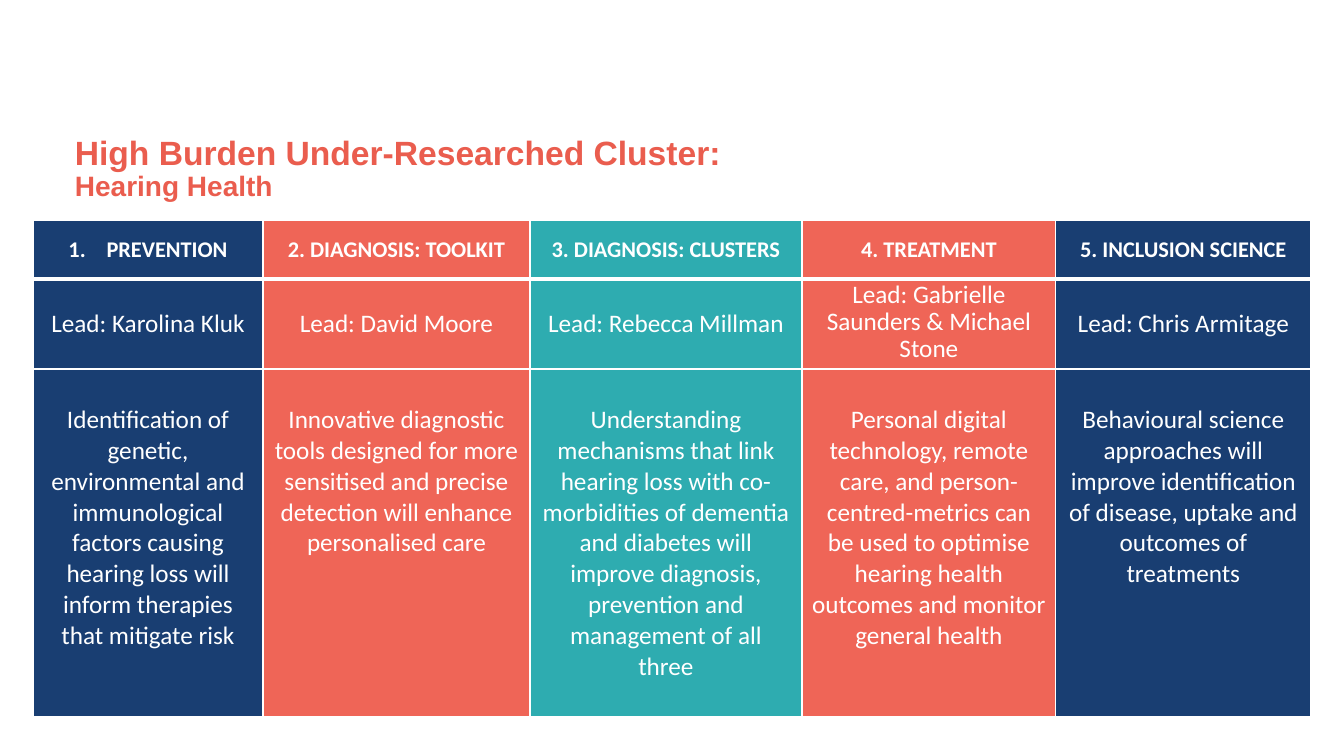
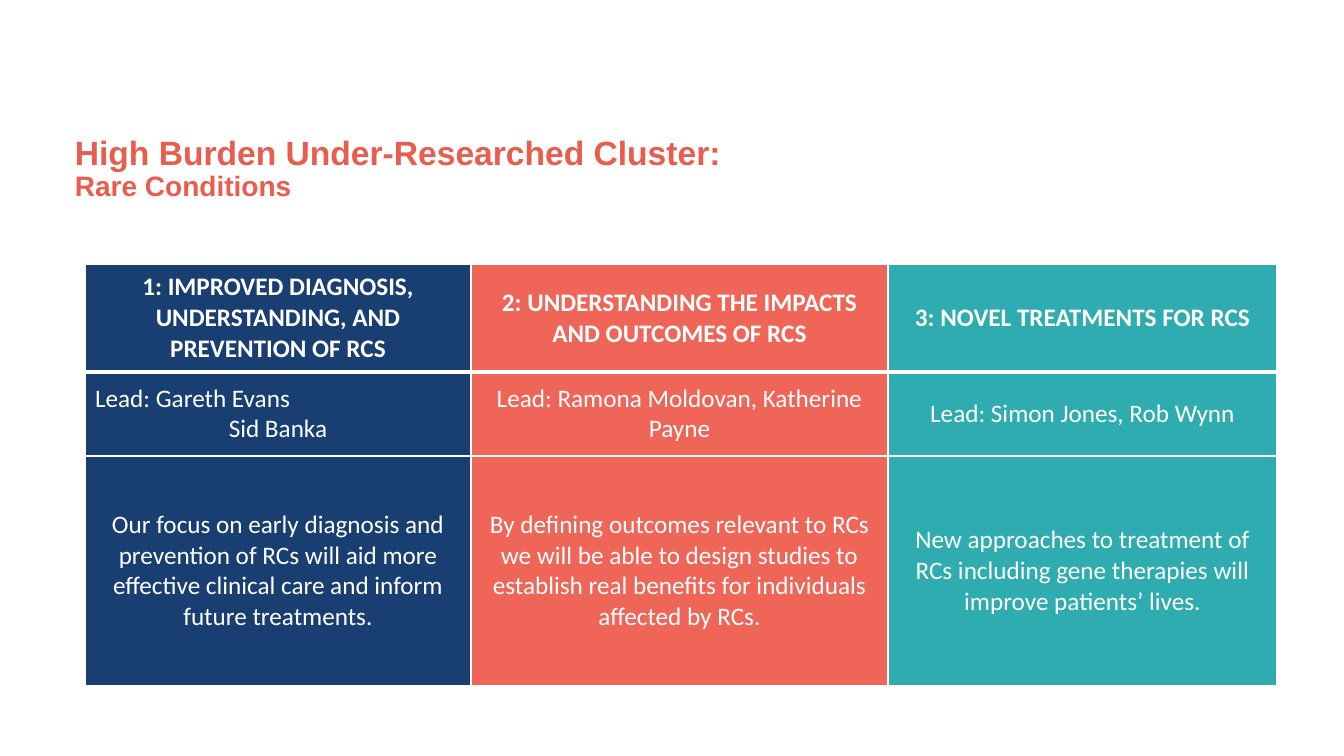
from dataclasses import dataclass

import pptx
import pptx.dml.color
import pptx.enum.text
import pptx.oxml
import pptx.oxml.ns
import pptx.util

PX = 914400 / 100.8
WIDTH, HEIGHT = 1344, 756
NAVY, CORAL, TEAL = "193E72", "EF6557", "2EACB0"
WHITE, RED = "FFFFFF", "EA5D4E"
SANS, BODY = "Arial", "Calibri"
TITLE = "High Burden Under-Researched Cluster:"
THIN, THICK = 1, 3

ALIGN = pptx.enum.text.PP_ALIGN
ANCHOR = pptx.enum.text.MSO_ANCHOR


@dataclass
class Line:
    text: str
    align: ALIGN = ALIGN.CENTER
    pitch: int | None = None  # line height in points
    indent: int = 0  # hanging indent in px; numbers the line when set


@dataclass
class Theme:
    fill: str
    head: Line
    leads: list[Line]
    goal: Line


@dataclass
class Page:
    name: str
    left: int
    top: int
    cols: list[int]
    rows: list[int]
    head_size: int
    themes: list[Theme]
    goal_top: int | None = None  # goals hang from the top by this much


PAGES = [
    Page("Hearing Health", 33, 220, [230, 267, 272, 254, 255], [59, 90, 348], 16, [
        Theme(NAVY, Line("PREVENTION", indent=38), [Line("Lead: Karolina Kluk")],
              Line("Identification of genetic, environmental and immunological factors "
                   "causing hearing loss will inform therapies that mitigate risk")),
        Theme(CORAL, Line("2. DIAGNOSIS: TOOLKIT"), [Line("Lead: David Moore")],
              Line("Innovative diagnostic tools designed for more sensitised and precise "
                   "detection will enhance personalised care")),
        Theme(TEAL, Line("3. DIAGNOSIS: CLUSTERS"), [Line("Lead: Rebecca Millman")],
              Line("Understanding mechanisms that link hearing loss with co-morbidities of "
                   "dementia and diabetes will improve diagnosis, prevention and management "
                   "of all three")),
        Theme(CORAL, Line("4. TREATMENT"),
              [Line("Lead: Gabrielle Saunders & Michael Stone", pitch=19)],
              Line("Personal digital technology, remote care, and person-centred-metrics can "
                   "be used to optimise hearing health outcomes and monitor general health")),
        Theme(NAVY, Line("5. INCLUSION SCIENCE"), [Line("Lead: Chris Armitage")],
              Line("Behavioural science approaches will improve identification of disease, "
                   "uptake and outcomes of treatments")),
    ], goal_top=36),
    Page("Rare Conditions", 85, 264, [386, 417, 389], [108, 84, 230], 18, [
        Theme(NAVY, Line("1: IMPROVED DIAGNOSIS, UNDERSTANDING, AND PREVENTION OF RCS"),
              [Line("Lead: Gareth Evans", ALIGN.LEFT), Line("Sid Banka")],
              Line("Our focus on early diagnosis and prevention of RCs will aid more "
                   "effective clinical care and inform future treatments.")),
        Theme(CORAL, Line("2: UNDERSTANDING THE IMPACTS AND OUTCOMES OF RCS"),
              [Line("Lead: Ramona Moldovan, Katherine Payne")],
              Line("By defining outcomes relevant to RCs we will be able to design studies to "
                   "establish real benefits for individuals affected by RCs.")),
        Theme(TEAL, Line("3: NOVEL TREATMENTS FOR RCS"), [Line("Lead: Simon Jones, Rob Wynn")],
              Line("New approaches to treatment of RCs including gene therapies will improve "
                   "patients’ lives.")),
    ]),
]


def emu(px: int) -> pptx.util.Emu:
    return pptx.util.Emu(round(px * PX))


def tint(code: str) -> pptx.dml.color.RGBColor:
    return pptx.dml.color.RGBColor.from_string(code)


def add_run(para, text: str, size: int, face: str, color: str, bold: bool) -> None:
    run = para.add_run()
    run.text = text
    run.font.size = pptx.util.Pt(size)
    run.font.name = face
    run.font.bold = bold
    run.font.color.rgb = tint(color)


def add_title(slide, name: str) -> None:
    frame = slide.shapes.add_textbox(emu(65), emu(119), emu(981), emu(101)).text_frame
    frame.word_wrap = True
    frame.vertical_anchor = ANCHOR.MIDDLE
    para = frame.paragraphs[0]
    para.line_spacing = 0.9
    add_run(para, TITLE, 24, SANS, RED, True)
    para.add_line_break()
    add_run(para, name, 20, SANS, RED, True)


def number(para, indent: int) -> None:
    """Number the paragraph with a hanging indent."""
    props = para._p.get_or_add_pPr()
    props.set("marL", str(emu(indent)))
    props.set("indent", str(-emu(indent)))
    mark = pptx.oxml.parse_xml(
        f'<a:buAutoNum {pptx.oxml.ns.nsdecls("a")} type="arabicPeriod"/>')
    props.append(mark)


def border(cell, top: int, base: int) -> None:
    props = cell._tc.get_or_add_tcPr()
    for side, width in (("L", THIN), ("R", THIN), ("T", top), ("B", base)):
        props.append(pptx.oxml.parse_xml(
            f'<a:ln{side} {pptx.oxml.ns.nsdecls("a")} w="{pptx.util.Pt(width)}">'
            f'<a:solidFill><a:srgbClr val="{WHITE}"/></a:solidFill></a:ln{side}>'))


def fill_cell(cell, lines: list[Line], size: int, bold: bool, color: str) -> None:
    cell.fill.solid()
    cell.fill.fore_color.rgb = tint(color)
    cell.vertical_anchor = ANCHOR.MIDDLE
    frame = cell.text_frame
    for rank, line in enumerate(lines):
        para = frame.add_paragraph() if rank else frame.paragraphs[0]
        para.alignment = line.align
        if line.pitch:
            para.line_spacing = pptx.util.Pt(line.pitch)
        if line.indent:
            number(para, line.indent)
        add_run(para, line.text, size, BODY, WHITE, bold)


def add_grid(slide, page: Page) -> None:
    frame = slide.shapes.add_table(
        len(page.rows), len(page.cols), emu(page.left), emu(page.top),
        emu(sum(page.cols)), emu(sum(page.rows)))
    grid = frame.table
    grid.horz_banding = False
    for row, height in zip(grid.rows, page.rows):
        row.height = emu(height)
    for col, width in zip(grid.columns, page.cols):
        col.width = emu(width)
    for x, theme in enumerate(page.themes):
        for y, lines in enumerate(([theme.head], theme.leads, [theme.goal])):
            cell = grid.cell(y, x)
            border(cell, THICK if y == 1 else THIN, THICK if y == 0 else THIN)
            fill_cell(cell, lines, page.head_size if y == 0 else 18, y == 0, theme.fill)
        if page.goal_top is not None:
            cell.vertical_anchor = ANCHOR.TOP
            cell.margin_top = emu(page.goal_top)


def main() -> None:
    deck = pptx.Presentation()
    deck.slide_width, deck.slide_height = emu(WIDTH), emu(HEIGHT)
    for page in PAGES:
        slide = deck.slides.add_slide(deck.slide_layouts[6])
        add_title(slide, page.name)
        add_grid(slide, page)
    deck.save("out.pptx")


if __name__ == "__main__":
    main()
